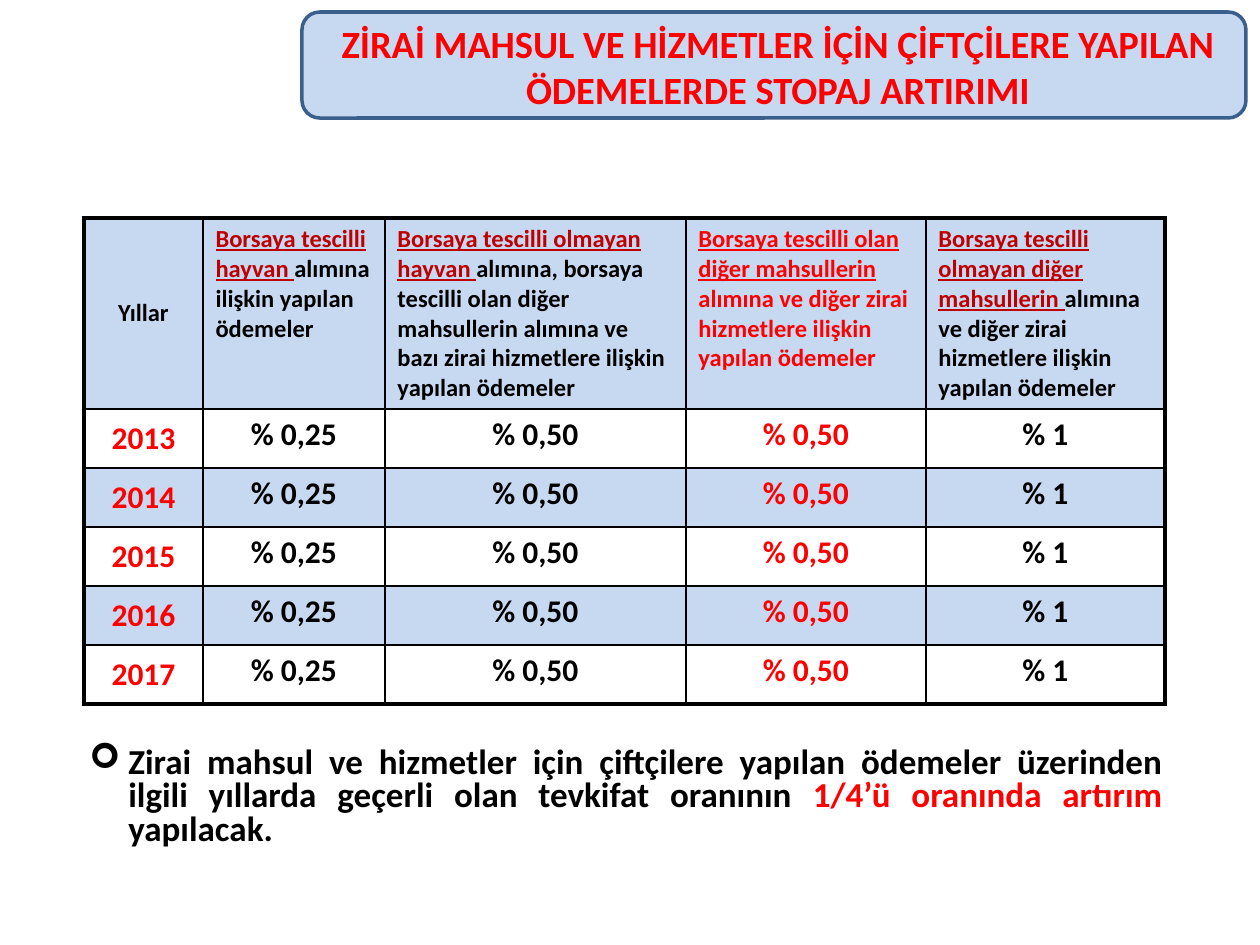
from lxml import etree
from pptx import Presentation
from pptx import util as u
from pptx.dml.color import RGBColor
from pptx.enum import shapes, text
from pptx.oxml.ns import qn

EMU_PER_PX = 914400 / 126
FONT = "Calibri"
BLUE, EDGE = "C6D9F1", "3A5F8C"
RED, DARK_RED, BLACK = "FF0000", "C00000", "000000"
THIN, THICK = 1, 2.25
CENTER, LEFT, JUSTIFY = (text.PP_ALIGN.CENTER, text.PP_ALIGN.LEFT,
                         text.PP_ALIGN.JUSTIFY)
TOP, MIDDLE = text.MSO_ANCHOR.TOP, text.MSO_ANCHOR.MIDDLE

TITLE = ["ZİRAİ MAHSUL VE HİZMETLER İÇİN ÇİFTÇİLERE YAPILAN",
         "ÖDEMELERDE STOPAJ ARTIRIMI"]

# Runs are (text, colour, underlined)
HEADERS = [
    [("Yıllar", BLACK, False)],
    [("Borsaya tescilli hayvan ", DARK_RED, True),
     ("alımına ilişkin yapılan ödemeler", BLACK, False)],
    [("Borsaya tescilli olmayan", DARK_RED, True),
     (" ", DARK_RED, False),
     ("hayvan ", DARK_RED, True),
     ("alımına, borsaya tescilli olan diğer mahsullerin alımına ve bazı "
      "zirai hizmetlere ilişkin yapılan ödemeler", BLACK, False)],
    [("Borsaya tescilli olan diğer mahsullerin ", RED, True),
     ("alımına ve diğer zirai hizmetlere ilişkin yapılan ödemeler",
      RED, False)],
    [("Borsaya tescilli olmayan diğer mahsullerin ", DARK_RED, True),
     ("alımına ve diğer zirai hizmetlere ilişkin yapılan ödemeler",
      BLACK, False)],
]
YEARS = ["2013", "2014", "2015", "2016", "2017"]
RATES = ["% 0,25", "% 0,50", "% 0,50", "% 1"]
COLUMN_COLORS = [RED, BLACK, BLACK, RED, BLACK]
COLUMN_WIDTHS = [119, 182, 301, 240, 239]
HEADER_HEIGHT, ROW_HEIGHT = 191, 59

NOTE = [
    ("Zirai mahsul ve hizmetler için çiftçilere yapılan ödemeler üzerinden "
     "ilgili yıllarda geçerli olan tevkifat oranının ", BLACK, False),
    ("1/4’ü oranında artırım", RED, False),
    (" yapılacak.", BLACK, False),
]


def px(n):
    return u.Emu(round(n * EMU_PER_PX))


def color(value):
    return RGBColor.from_string(value)


def add_runs(p, runs, size, align):
    p.alignment = align
    for words, tint, underlined in runs:
        r = p.add_run()
        r.text = words
        r.font.name = FONT
        r.font.size = u.Pt(size)
        r.font.bold = True
        r.font.underline = underlined
        r.font.color.rgb = color(tint)


def add_text_box(s, left, top, width, height, anchor):
    tf = s.shapes.add_textbox(px(left), px(top), px(width),
                              px(height)).text_frame
    tf.word_wrap = True
    tf.vertical_anchor = anchor
    return tf


def add_title(s):
    sp = s.shapes.add_shape(shapes.MSO_SHAPE.ROUNDED_RECTANGLE,
                            px(302), px(12), px(944), px(106))
    sp.shadow.inherit = False
    sp.fill.solid()
    sp.fill.fore_color.rgb = color(BLUE)
    sp.line.color.rgb = color(EDGE)
    sp.line.width = u.Pt(2)

    p = add_text_box(s, 312, 7, 932, 118, MIDDLE).paragraphs[0]
    for i, line in enumerate(TITLE):
        if i:
            p.add_line_break()
        add_runs(p, [(line, RED, False)], 22, CENTER)


def set_borders(cell, widths):
    tc_pr = cell._tc.get_or_add_tcPr()
    for side in "LRTB":
        ln = etree.SubElement(tc_pr, qn("a:ln" + side),
                              w=str(u.Pt(widths[side])))
        fill = etree.SubElement(ln, qn("a:solidFill"))
        etree.SubElement(fill, qn("a:srgbClr"), val=BLACK)


def fill_cell(cell, runs, size, align, anchor, shaded):
    cell.vertical_anchor = anchor
    if shaded:
        cell.fill.solid()
        cell.fill.fore_color.rgb = color(BLUE)
    else:
        cell.fill.background()
    add_runs(cell.text_frame.paragraphs[0], runs, size, align)


def add_rate_table(s):
    n_rows, n_cols = len(YEARS) + 1, len(COLUMN_WIDTHS)
    height = HEADER_HEIGHT + ROW_HEIGHT * len(YEARS)
    table = s.shapes.add_table(n_rows, n_cols, px(84), px(218),
                               px(sum(COLUMN_WIDTHS)), px(height)).table
    table.first_row = table.horz_banding = False
    for column, width in zip(table.columns, COLUMN_WIDTHS):
        column.width = px(width)

    for i, row in enumerate(table.rows):
        row.height = px(ROW_HEIGHT if i else HEADER_HEIGHT)
        for j, cell in enumerate(row.cells):
            # Thick outer frame, thin inner grid
            outer = {"L": j == 0, "R": j == n_cols - 1,
                     "T": i == 0, "B": i == n_rows - 1}
            set_borders(cell, {k: THICK if v else THIN
                               for k, v in outer.items()})
            anchor = TOP if j else MIDDLE
            if i == 0:
                fill_cell(cell, HEADERS[j], 14, LEFT if j else CENTER,
                          anchor, True)
            else:
                words = RATES[j - 1] if j else YEARS[i - 1]
                fill_cell(cell, [(words, COLUMN_COLORS[j], False)], 18,
                          CENTER, anchor, i % 2 == 0)


def add_note(s):
    p = add_text_box(s, 64, 741, 1111, 115, TOP).paragraphs[0]
    p.line_spacing = 0.8
    p_pr = p._p.get_or_add_pPr()
    p_pr.set("marL", str(px(52)))
    p_pr.set("indent", str(px(-39)))
    etree.SubElement(p_pr, qn("a:buFont"), typeface="Wingdings")
    etree.SubElement(p_pr, qn("a:buChar"), char="➢")
    add_runs(p, NOTE, 20, JUSTIFY)


def main():
    prs = Presentation()
    prs.slide_width, prs.slide_height = px(1260), px(945)
    s = prs.slides.add_slide(prs.slide_layouts[6])
    add_title(s)
    add_rate_table(s)
    add_note(s)
    prs.save("out.pptx")


if __name__ == "__main__":
    main()
